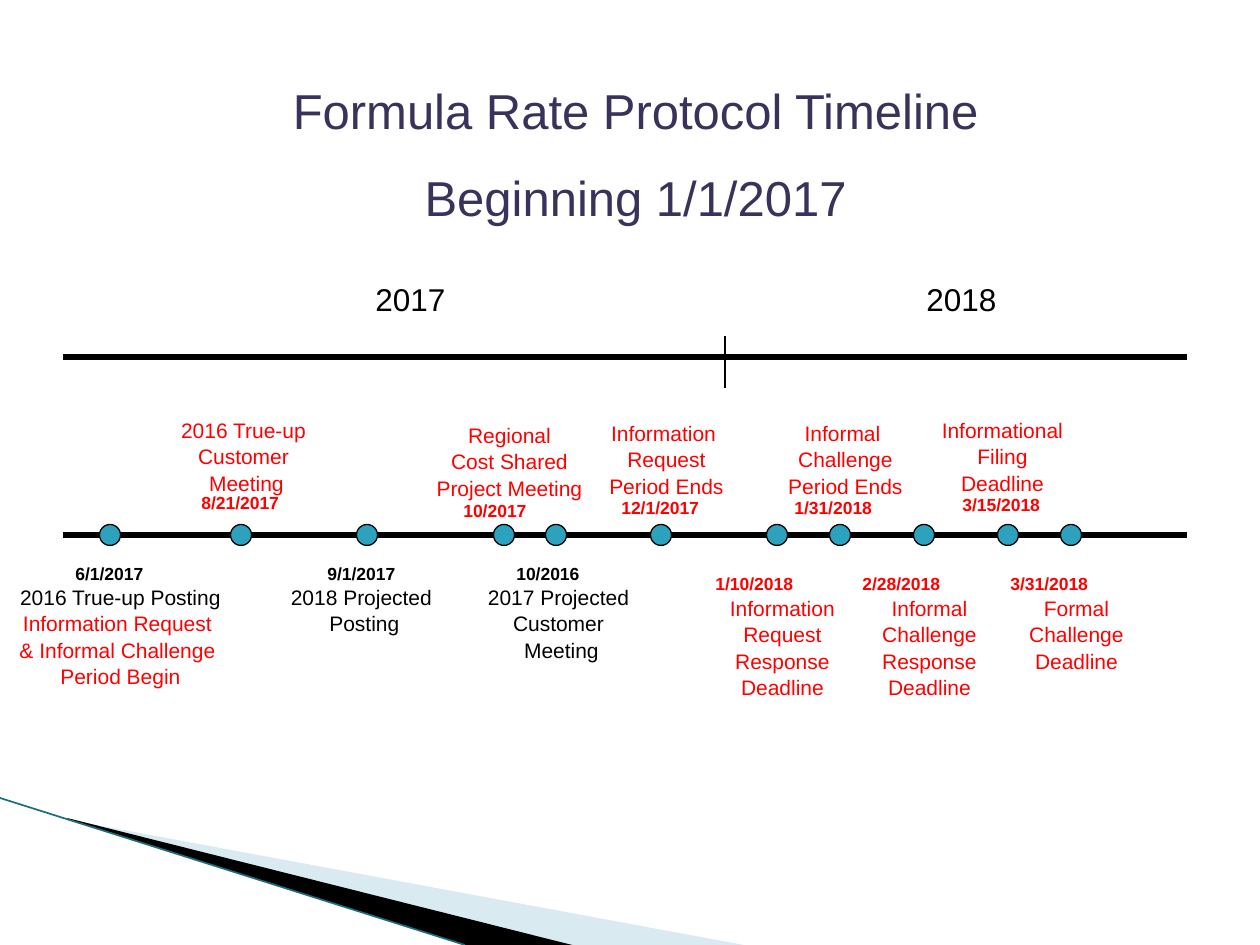
from pptx import Presentation
from pptx.dml.color import RGBColor
from pptx.enum.shapes import MSO_CONNECTOR, MSO_SHAPE
from pptx.enum.text import MSO_ANCHOR, PP_ALIGN
from pptx.oxml.ns import qn
from pptx.util import Emu, Pt
from lxml import etree

PX = 914400 / 126
FONT = "Arial"
STRAIGHT, OVAL = MSO_CONNECTOR.STRAIGHT, MSO_SHAPE.OVAL
LEFT, CENTER = PP_ALIGN.LEFT, PP_ALIGN.CENTER
TOP, MIDDLE = MSO_ANCHOR.TOP, MSO_ANCHOR.MIDDLE

BLACK = RGBColor(0x00, 0x00, 0x00)
RED = RGBColor(0xFF, 0x00, 0x00)
PURPLE = RGBColor(0x3A, 0x32, 0x5A)
TEAL = RGBColor(0x2D, 0xA2, 0xBF)
DARK_TEAL = RGBColor(0x1A, 0x6C, 0x7F)
PALE_BLUE = RGBColor(0xA0, 0xCB, 0xDC)

TITLE = ["Formula Rate Protocol Timeline", "Beginning 1/1/2017"]
YEARS = [("2017", 363), ("2018", 914)]

AXIS_LEFT, AXIS_RIGHT = 63, 1187
YEAR_AXIS_Y, EVENT_AXIS_Y = 357, 535
YEAR_TICK = (725, 336, 725, 388)
DOT_SIZE = 21
DOT_CENTERS = [110, 241, 367, 504, 556, 661, 777, 840, 924, 1008, 1071]

# date, colour, left, top, width
DATES = [
    ("6/1/2017", BLACK, 63, 557, 105),
    ("8/21/2017", RED, 189, 486, 126),
    ("9/1/2017", BLACK, 315, 557, 105),
    ("10/2017", RED, 451, 494, 116),
    ("10/2016", BLACK, 504, 557, 116),
    ("12/1/2017", RED, 609, 491, 116),
    ("1/10/2018", RED, 703, 567, 147),
    ("1/31/2018", RED, 782, 491, 116),
    ("2/28/2018", RED, 850, 567, 147),
    ("3/15/2018", RED, 950, 488, 116),
    ("3/31/2018", RED, 998, 567, 147),
]
DATE_HEIGHT = 55

# left, top, first-line colour, colour of the other lines, lines
LABELS = [
    (-42, 577, BLACK, RED, ["2016 True-up Posting", "Information Request ",
                            "& Informal Challenge ", "Period Begin"]),
    (84, 410, RED, RED, ["2016 True-up ", "Customer ", "Meeting"]),
    (199, 577, BLACK, BLACK, ["2018 Projected", " Posting"]),
    (347, 415, RED, RED, ["Regional", "Cost Shared", "Project Meeting"]),
    (399, 577, BLACK, BLACK, ["2017 Projected ", "Customer ", "Meeting"]),
    (504, 413, RED, RED, ["Information ", "Request", "Period Ends"]),
    (620, 588, RED, RED, ["Information", "Request", "Response", "Deadline"]),
    (683, 413, RED, RED, ["Informal ", "Challenge", "Period Ends"]),
    (767, 588, RED, RED, ["Informal", "Challenge", "Response", "Deadline"]),
    (840, 410, RED, RED, ["Informational", "Filing", "Deadline"]),
    (914, 588, RED, RED, ["Formal", "Challenge", "Deadline"]),
]
LABEL_WIDTH, LABEL_LINE, LABEL_PADDING = 325, 25, 14

# colour, opacity in percent, corners
WEDGES = [
    (PALE_BLUE, 40, [(69, 820), (749, 946), (575, 946), (69, 819)]),
    (BLACK, 100, [(67, 818), (576, 946), (469, 946), (68, 819)]),
]
WEDGE_EDGE = (0, 798, 465, 945)


def px(length):
    return Emu(round(length * PX))


def add_text(page, place, lines, size, align=LEFT, bold=False,
             gap=0, spacing=None, anchor=TOP):
    """Write (text, colour) lines, one paragraph each, at a px place."""
    box = page.shapes.add_textbox(*map(px, place))
    frame = box.text_frame
    frame.word_wrap = True
    frame.vertical_anchor = anchor
    for index, (text, color) in enumerate(lines):
        para = frame.add_paragraph() if index else frame.paragraphs[0]
        para.alignment = align
        if index and gap:
            para.space_before = Pt(gap)
        if spacing:
            para.line_spacing = spacing
        span = para.add_run()
        span.text = text
        span.font.name = FONT
        span.font.size = Pt(size)
        span.font.bold = bold
        span.font.color.rgb = color


def add_line(page, ends, color, weight):
    line = page.shapes.add_connector(STRAIGHT, *map(px, ends))
    line.line.color.rgb = color
    line.line.width = Pt(weight)
    etree.SubElement(line._element.spPr, qn("a:effectLst"))


def add_wedge(page, color, opacity, corners):
    builder = page.shapes.build_freeform(*corners[0], scale=PX)
    builder.add_line_segments(corners[1:], close=True)
    wedge = builder.convert_to_shape()
    wedge.shadow.inherit = False
    wedge.fill.solid()
    wedge.fill.fore_color.rgb = color
    wedge.line.fill.background()
    if opacity < 100:
        tint = wedge._element.spPr.find(qn("a:solidFill"))[0]
        etree.SubElement(tint, qn("a:alpha"), val=str(opacity * 1000))


def add_dot(page, center):
    corner = DOT_SIZE / 2
    dot = page.shapes.add_shape(OVAL, px(center - corner), px(EVENT_AXIS_Y - corner),
                                px(DOT_SIZE), px(DOT_SIZE))
    dot.shadow.inherit = False
    dot.fill.solid()
    dot.fill.fore_color.rgb = TEAL
    dot.line.color.rgb = BLACK
    dot.line.width = Pt(0.75)


def main():
    deck = Presentation()
    deck.slide_width, deck.slide_height = px(1260), px(945)
    page = deck.slides.add_slide(deck.slide_layouts[6])

    for wedge in WEDGES:
        add_wedge(page, *wedge)
    add_line(page, WEDGE_EDGE, DARK_TEAL, 0.95)

    add_text(page, (84, 73, 1103, 161), [(line, PURPLE) for line in TITLE],
             28, CENTER, gap=16, anchor=MIDDLE)

    for y in (YEAR_AXIS_Y, EVENT_AXIS_Y):
        add_line(page, (AXIS_LEFT, y, AXIS_RIGHT, y), BLACK, 3)
    add_line(page, YEAR_TICK, BLACK, 1)
    for year, left in YEARS:
        add_text(page, (left, 274, 199, 53), [(year, BLACK)], 18)

    for center in DOT_CENTERS:
        add_dot(page, center)
    for date, color, left, top, width in DATES:
        add_text(page, (left, top, width, DATE_HEIGHT), [(date, color)], 10, bold=True)
    for left, top, first, rest, lines in LABELS:
        height = LABEL_LINE * len(lines) + LABEL_PADDING
        colors = [first] + [rest] * (len(lines) - 1)
        add_text(page, (left, top, LABEL_WIDTH, height), list(zip(lines, colors)),
                 12, CENTER, spacing=1.05)

    deck.save("out.pptx")


if __name__ == "__main__":
    main()
